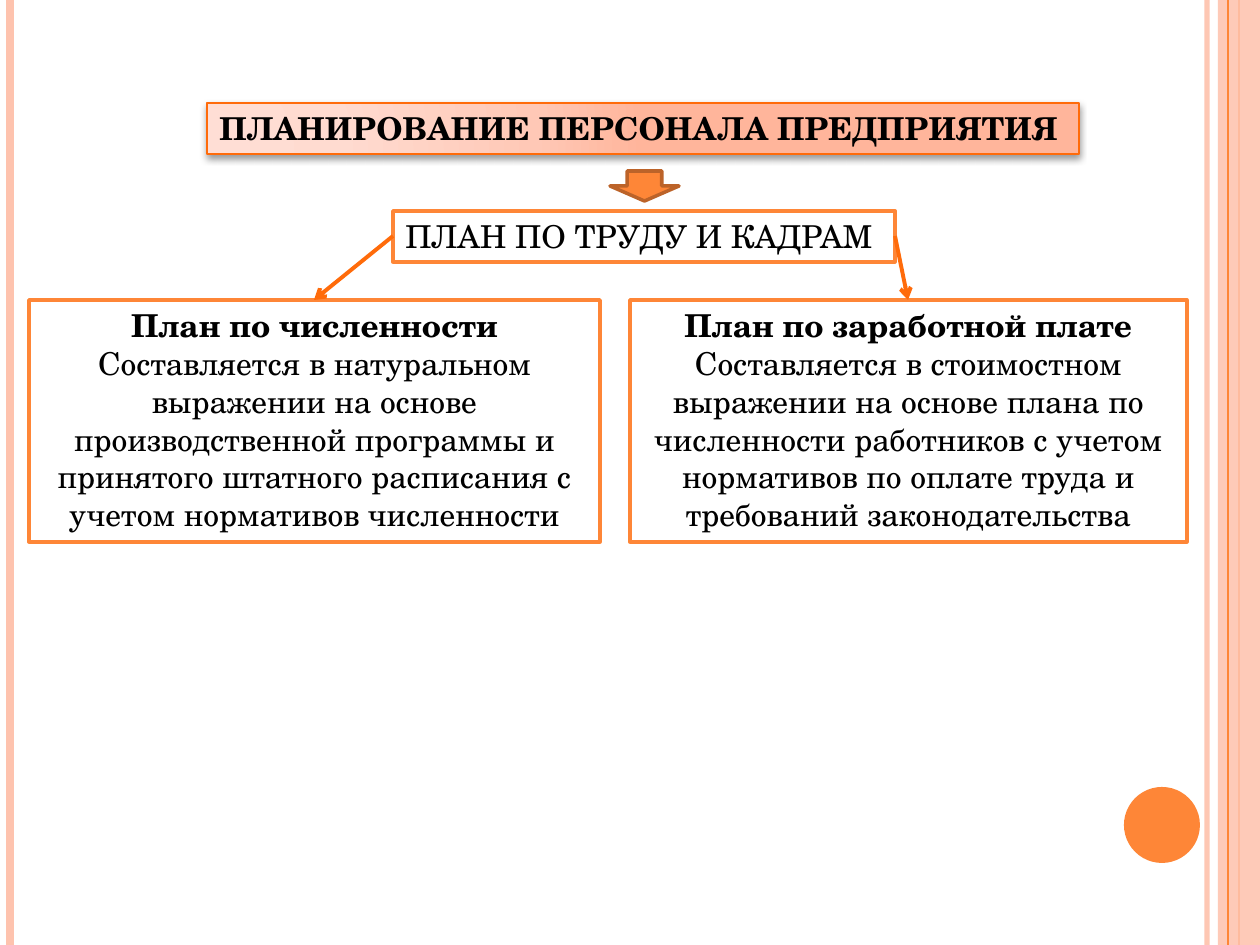
from lxml.etree import SubElement
from pptx import Presentation
from pptx.dml.color import RGBColor
from pptx.enum.shapes import MSO_CONNECTOR, MSO_SHAPE
from pptx.enum.text import MSO_ANCHOR, PP_ALIGN
from pptx.oxml import parse_xml
from pptx.oxml.ns import nsdecls, qn
from pptx.util import Pt

WIDTH, HEIGHT = 1260, 945
EMU_PER_PX = 914400 / 126
FONT = "TeX Gyre Schola"
COLORS = {
    "white": "FFFFFF",
    "black": "000000",
    "orange": "FE8637",
    "dark orange": "BC6329",
    "bright orange": "FF6B0A",
    "pink": "FEC3AE",
}
TITLE_STOPS = [(0, "FFDED5"), (30, "FFDBD0"), (75, "FFC8B6"), (100, "FFB59B")]


def px(length):
    return round(length * EMU_PER_PX)


def color(name):
    return RGBColor.from_string(COLORS[name])


def set_alpha(fill_parent, percent):
    """Make the solid fill inside the given element partly transparent."""
    rgb = fill_parent.find(qn("a:solidFill")).find(qn("a:srgbClr"))
    SubElement(rgb, qn("a:alpha"), val=str(percent * 1000))


def add_box(page, box, kind=MSO_SHAPE.RECTANGLE, fill="white", line=None, weight=2):
    shape = page.shapes.add_shape(kind, *(px(length) for length in box))
    shape.shadow.inherit = False
    shape.fill.solid()
    shape.fill.fore_color.rgb = color(fill)
    if line:
        shape.line.color.rgb = color(line)
        shape.line.width = Pt(weight)
    else:
        shape.line.fill.background()
    return shape


def add_line(page, start, end, stroke, weight, arrow=False, alpha=None):
    points = (px(length) for length in (*start, *end))
    line = page.shapes.add_connector(MSO_CONNECTOR.STRAIGHT, *points)
    line.line.color.rgb = color(stroke)
    line.line.width = Pt(weight)
    outline = line.line._get_or_add_ln()
    if alpha:
        set_alpha(outline, alpha)
    if arrow:
        SubElement(outline, qn("a:tailEnd"), type="arrow")
    SubElement(line._element.spPr, qn("a:effectLst"))


def add_text(frame, text, bold=False, align=PP_ALIGN.LEFT, first=True):
    frame.word_wrap = True
    frame.vertical_anchor = MSO_ANCHOR.TOP
    para = frame.paragraphs[0] if first else frame.add_paragraph()
    para.alignment = align
    span = para.add_run()
    span.text = text
    span.font.name = FONT
    span.font.size = Pt(18)
    span.font.bold = bold
    span.font.color.rgb = color("black")


def add_title_effects(shape):
    """Give the title its radial gradient and soft shadow."""
    stops = "".join(
        f'<a:gs pos="{place * 1000}"><a:srgbClr val="{rgb}"/></a:gs>'
        for place, rgb in TITLE_STOPS
    )
    gradient = parse_xml(
        f'<a:gradFill {nsdecls("a")}><a:gsLst>{stops}</a:gsLst><a:path path="circle">'
        '<a:fillToRect l="5000" t="100000" r="120000" b="10000"/></a:path></a:gradFill>'
    )
    properties = shape._element.spPr
    properties.replace(properties.find(qn("a:solidFill")), gradient)
    effects = properties.find(qn("a:effectLst"))
    shadow = SubElement(
        effects, qn("a:outerShdw"), blurRad=str(Pt(4)), dist=str(Pt(2)),
        dir="5400000", rotWithShape="0",
    )
    rgb = SubElement(shadow, qn("a:srgbClr"), val=COLORS["black"])
    SubElement(rgb, qn("a:alpha"), val="40000")


def add_frame(page, box):
    """Side stripes and corner disc."""
    left, top, width, height = box
    right, bottom = left + width, top + height

    def stripe(x, stroke, weight, alpha=None):
        add_line(page, (x, top), (x, bottom), stroke, weight, alpha=alpha)

    stripe(right - 53, "pink", 3, alpha=93)
    stripe(left + 10, "pink", 4.5)
    stripe(right - 21, "orange", 1.5)
    band = add_box(page, (right - 42, top, 42, height), fill="pink")
    set_alpha(band._element.spPr, 87)
    stripe(right - 32, "orange", 0.75)
    add_box(page, (right - 136, bottom - 158, 76, 76), MSO_SHAPE.OVAL, "orange")


def add_title(page, box):
    """Title bar with the block arrow below it."""
    left, top, width, height = box
    title = add_box(page, box, line="bright orange", weight=1)
    add_title_effects(title)
    add_text(title.text_frame, "ПЛАНИРОВАНИЕ ПЕРСОНАЛА ПРЕДПРИЯТИЯ", bold=True)
    arrow_box = (left + 403, top + height + 17, 69, 30)
    add_box(page, arrow_box, MSO_SHAPE.DOWN_ARROW, "orange", "dark orange")


def add_plan(page, box):
    plan = add_box(page, box, line="orange")
    add_text(plan.text_frame, "ПЛАН ПО ТРУДУ И КАДРАМ")


def add_branch(page, box, heading, body, start):
    """Description box and the arrow that leads to its top centre."""
    left, top, width, _ = box
    branch = add_box(page, box, line="orange")
    add_text(branch.text_frame, heading, bold=True, align=PP_ALIGN.CENTER)
    add_text(branch.text_frame, body, align=PP_ALIGN.CENTER, first=False)
    add_line(page, start, (left + width // 2, top), "bright orange", 2.25, arrow=True)


def main():
    deck = Presentation()
    deck.slide_width, deck.slide_height = px(WIDTH), px(HEIGHT)
    page = deck.slides.add_slide(deck.slide_layouts[6])

    add_frame(page, (0, 0, WIDTH, HEIGHT))
    add_title(page, (207, 103, 872, 51))
    plan_box = left, top, width, height = (393, 211, 502, 51)
    add_plan(page, plan_box)
    middle = top + height // 2
    add_branch(
        page, (29, 300, 571, 242), "План по численности",
        "Составляется в натуральном выражении на основе производственной программы "
        "и принятого штатного расписания с учетом нормативов численности",
        (left, middle),
    )
    add_branch(
        page, (630, 300, 557, 242), "План по заработной плате",
        "Составляется в стоимостном выражении на основе плана по численности "
        "работников с учетом нормативов по оплате труда и требований законодательства",
        (left + width, middle),
    )
    # The right arrow ends near the top of its own box
    deck.save("out.pptx")


if __name__ == "__main__":
    main()
